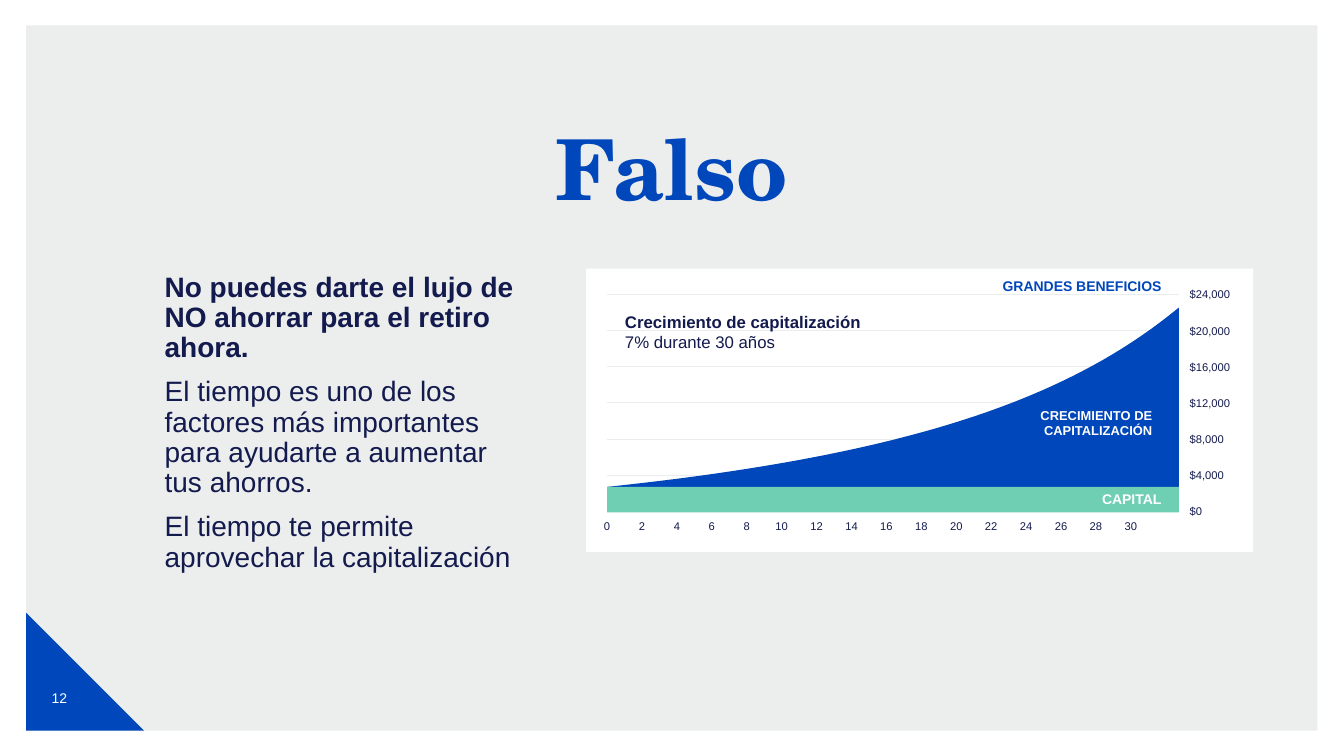
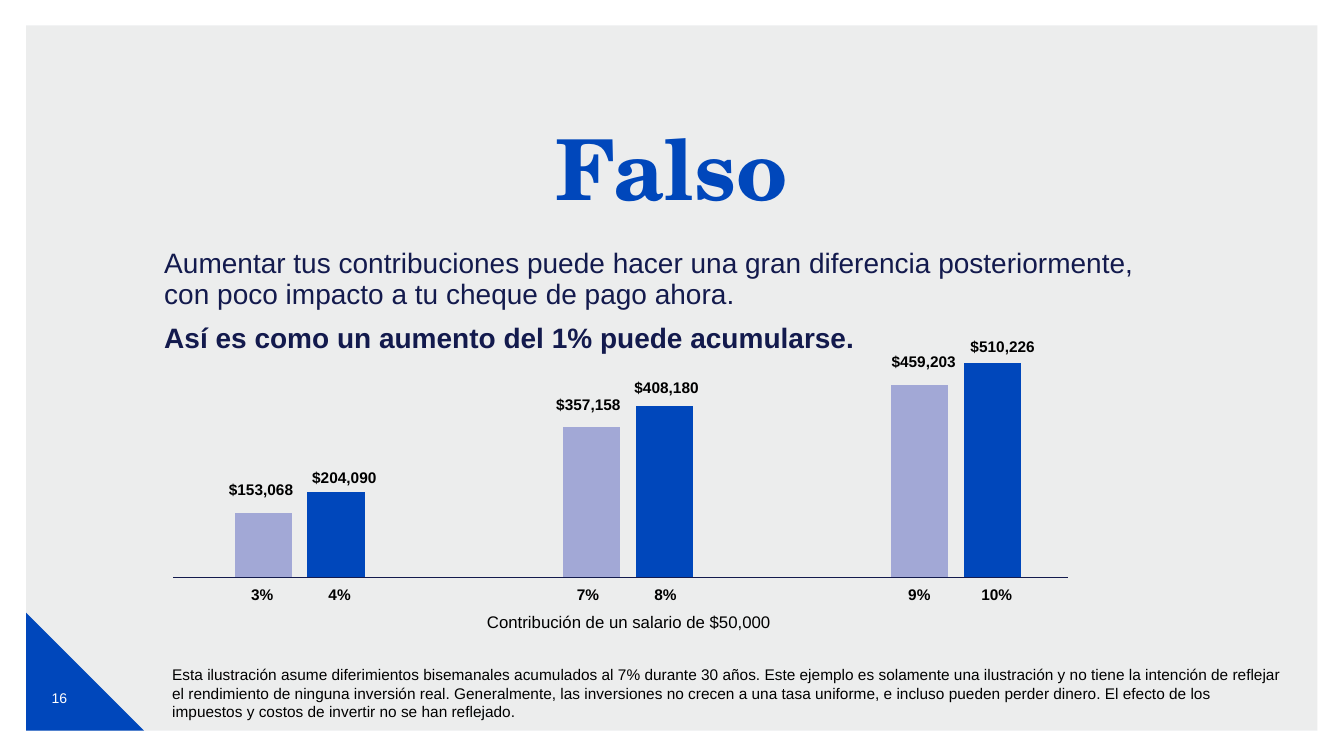
"""Two slides on retirement savings: compound growth and contribution increases."""
import pptx
import pptx.chart.data
import pptx.dml.color
import pptx.enum.chart
import pptx.enum.shapes
import pptx.enum.text
import pptx.oxml
import pptx.oxml.ns
import pptx.util

Cm, Pt = pptx.util.Cm, pptx.util.Pt
SHAPE = pptx.enum.shapes.MSO_SHAPE
ALIGN = pptx.enum.text.PP_ALIGN
ANCHOR = pptx.enum.text.MSO_ANCHOR
qn = pptx.oxml.ns.qn

COLORS = {"blue": "0047BB", "navy": "131A4D", "mint": "6ECFB2", "lilac": "A2A8D6",
          "deep": "003B9B", "band": "D0D3D4", "grid": "EBECEE", "white": "FFFFFF",
          "black": "000000"}
FONT, TITLE_FONT = "Arial", "TeX Gyre Schola"
NO_INSET, CHART_INSET, INSET = (0, 0), (0, 0.25), (0.25, 0.25)

TITLE = "Falso"
GROWTH_BODY = [
    ("No puedes darte el lujo de NO ahorrar para el retiro ahora.", True),
    ("El tiempo es uno de los factores más importantes para ayudarte a aumentar tus ahorros.", False),
    ("El tiempo te permite aprovechar la capitalización", False),
]
GROWTH_HEADING = [("Crecimiento de capitalización", True), ("7% durante 30 años", False)]
AMOUNTS = ["$24,000", "$20,000", "$16,000", "$12,000", "$8,000", "$4,000", "$0"]
YEARS = range(0, 31, 2)
AREA_LABELS = [
    ("CRECIMIENTO DE CAPITALIZACIÓN", (26.19, 9.93, 3.1, 1.45), 9.2, "white"),
    ("CAPITAL", (26.65, 11.86, 2.87, 1.45), 10, "white"),
    ("GRANDES BENEFICIOS", (25.05, 6.48, 4.47, 1.45), 10, "blue"),
]
PLOT_LEFT, PLOT_RIGHT, GRID_TOP, GRID_STEP, YEAR_STEP = 15.3, 29.71, 7.42, 0.91, 0.88
CURVE = [(PLOT_LEFT, 12.27), (23.01, 11.46), (26.97, 10.01), (PLOT_RIGHT, 7.75)]

RAISE_BODY = [
    ("Aumentar tus contribuciones puede hacer una gran diferencia posteriormente, "
     "con poco impacto a tu cheque de pago ahora.", False),
    ("Así es como un aumento del 1% puede acumularse.", True),
]
BAR_SERIES = [
    ("Series 1", [30, 70, 90, None], "lilac"),
    ("Series 2", [40, 80, 100, None], "blue"),
    ("Series 3", [None] * 4, "deep"),
]
BAR_LABELS = [
    ("3%", 6.61, "$153,068", 6.58, 11.96),
    ("4%", 8.56, "$204,090", 8.68, 11.66),
    ("7%", 14.82, "$357,158", 14.83, 9.83),
    ("8%", 16.77, "$408,180", 16.8, 9.4),
    ("9%", 23.17, "$459,203", 23.28, 8.74),
    ("10%", 25.12, "$510,226", 25.27, 8.36),
]
BAR_CAPTION = "Contribución de un salario de $50,000"
DISCLAIMER = ("Esta ilustración asume diferimientos bisemanales acumulados al 7% durante 30 años. "
              "Este ejemplo es solamente una ilustración y no tiene la intención de reflejar el "
              "rendimiento de ninguna inversión real. Generalmente, las inversiones no crecen a una "
              "tasa uniforme, e incluso pueden perder dinero. El efecto de los impuestos y costos de "
              "invertir no se han reflejado.")


def rgb(name):
    return pptx.dml.color.RGBColor.from_string(COLORS[name])


def box_cm(box):
    return [Cm(v) for v in box]


def paint(sp, color):
    sp.shadow.inherit = False
    sp.fill.solid()
    sp.fill.fore_color.rgb = rgb(color)
    sp.line.fill.background()
    return sp


def add_block(slide, kind, box, color):
    return paint(slide.shapes.add_shape(kind, *box_cm(box)), color)


def fill_text(sp, lines, size, color, font=FONT, align=ALIGN.LEFT, anchor=ANCHOR.TOP,
              inset=INSET, spacing=None, gap=0):
    tf = sp.text_frame
    tf.word_wrap = True
    tf.auto_size = pptx.enum.text.MSO_AUTO_SIZE.NONE
    tf.vertical_anchor = anchor
    tf.margin_left, tf.margin_right = [Cm(v) for v in inset]
    tf.margin_top = tf.margin_bottom = Cm(0.13)
    tf.text = "\n".join(text for text, _ in lines)
    for i, (p, (_, bold)) in enumerate(zip(tf.paragraphs, lines)):
        p.alignment = align
        p.line_spacing = spacing
        if i and gap:
            p.space_before = Pt(gap)
        for r in p.runs:
            r.font.name, r.font.size, r.font.bold = font, Pt(size), bold
            r.font.color.rgb = rgb(color)


def add_text(slide, box, lines, size, color, **style):
    if isinstance(lines, str):
        lines = [(lines, False)]
    fill_text(slide.shapes.add_textbox(*box_cm(box)), lines, size, color, **style)


def add_body(slide, box, lines):
    add_text(slide, box, lines, 20, "navy", inset=NO_INSET, spacing=0.9, gap=10)


def add_rule(slide, left, right, y, color):
    line = slide.shapes.add_connector(pptx.enum.shapes.MSO_CONNECTOR.STRAIGHT,
                                      Cm(left), Cm(y), Cm(right), Cm(y))
    line.line.color.rgb = rgb(color)
    line.line.width = Pt(0.5)
    line._element.spPr.append(pptx.oxml.parse_xml(
        f'<a:effectLst {pptx.oxml.ns.nsdecls("a")}/>'))


def decorate_layout(slide):
    band = add_block(slide, SHAPE.RECTANGLE, (0.66, 0.64, 32.54, 17.77), "band")
    band_color = band._element.spPr.find(qn("a:solidFill"))[0]
    band_color.append(pptx.oxml.parse_xml(
        f'<a:alpha {pptx.oxml.ns.nsdecls("a")} val="40000"/>'))
    corner = add_block(slide, SHAPE.RIGHT_TRIANGLE, (0.66, 15.44, 2.97, 2.97), "blue")
    tree = slide.slide_layout.shapes.element
    for i, sp in enumerate((band, corner)):
        tree.insert(2 + i, sp._element)


def new_slide(prs, number):
    slide = prs.slides.add_slide(prs.slide_layouts[5])
    title = slide.shapes.title
    title.left, title.top, title.width, title.height = box_cm((4.14, 3.1, 25.55, 1.7))
    fill_text(title, [(TITLE, True)], 60, "blue", font=TITLE_FONT, align=ALIGN.CENTER,
              inset=NO_INSET, spacing=0.9)
    add_text(slide, (0.8, 16.84, 1.4, 1.47), str(number), 10, "white",
             align=ALIGN.CENTER, anchor=ANCHOR.MIDDLE)
    return slide


def curve_point(t):
    weights = ((1 - t) ** 3, 3 * t * (1 - t) ** 2, 3 * t ** 2 * (1 - t), t ** 3)
    return tuple(Cm(sum(w * pt[axis] for w, pt in zip(weights, CURVE))) for axis in (0, 1))


def add_growth_graph(slide):
    add_block(slide, SHAPE.RECTANGLE, (14.77, 6.77, 16.81, 7.14), "white")
    for i, amount in enumerate(AMOUNTS):
        y = GRID_TOP + i * GRID_STEP
        add_text(slide, (29.98, y - 0.37, 1.6, 0.74), amount, 8, "navy",
                 anchor=ANCHOR.MIDDLE, inset=CHART_INSET)
        if amount != AMOUNTS[-1]:
            add_rule(slide, PLOT_LEFT, PLOT_RIGHT, y, "grid")
    for i, year in enumerate(YEARS):
        add_text(slide, (PLOT_LEFT + (i - 0.5) * YEAR_STEP, 13, YEAR_STEP, 0.53), str(year), 8,
                 "navy", align=ALIGN.CENTER, anchor=ANCHOR.MIDDLE, inset=NO_INSET)
    base = CURVE[0][1]
    points = [curve_point(i / 60) for i in range(61)]
    builder = slide.shapes.build_freeform(*points[0])
    builder.add_line_segments(points[1:] + [(Cm(PLOT_RIGHT), Cm(base))], close=True)
    paint(builder.convert_to_shape(), "blue")
    add_block(slide, SHAPE.RECTANGLE, (PLOT_LEFT, base, PLOT_RIGHT - PLOT_LEFT, 0.64), "mint")
    for text, box, size, color in AREA_LABELS:
        add_text(slide, box, [(text, True)], size, color, align=ALIGN.RIGHT,
                 anchor=ANCHOR.MIDDLE, inset=CHART_INSET)
    add_text(slide, (15.75, 7.29, 6.6, 2.16), GROWTH_HEADING, 12, "navy",
             anchor=ANCHOR.MIDDLE, inset=CHART_INSET)


def clear_chart_background(chart):
    ns = pptx.oxml.ns.nsdecls("c", "a")
    blank = f"<c:spPr {ns}><a:noFill/><a:ln><a:noFill/></a:ln></c:spPr>"
    frame = chart._chartSpace.find(qn("c:chart"))
    frame.addnext(pptx.oxml.parse_xml(blank))
    plot_area = frame.find(qn("c:plotArea"))
    plot_area.append(pptx.oxml.parse_xml(blank))
    for layout in plot_area.findall(qn("c:layout")):
        plot_area.remove(layout)
    places = "".join(f'<c:{tag} val="{val}"/>' for tag, val in (
        ("layoutTarget", "inner"), ("xMode", "edge"), ("yMode", "edge"),
        ("x", 0), ("y", 0.11), ("w", 1), ("h", 0.78)))
    plot_area.insert(0, pptx.oxml.parse_xml(
        f"<c:layout {ns}><c:manualLayout>{places}</c:manualLayout></c:layout>"))


def add_bar_chart(slide):
    data = pptx.chart.data.CategoryChartData()
    data.categories = ["1", "2", "3"]
    for name, values, _ in BAR_SERIES:
        data.add_series(name, values)
    chart = slide.shapes.add_chart(pptx.enum.chart.XL_CHART_TYPE.COLUMN_CLUSTERED,
                                   *box_cm((4.33, 8.39, 33.1, 6.93)), data).chart
    chart.has_legend = chart.has_title = False
    chart.font.name, chart.font.size = FONT, Pt(10)
    chart.font.color.rgb = rgb("navy")
    axis = chart.value_axis
    axis.minimum_scale, axis.maximum_scale = 0, 100
    axis.has_major_gridlines = False
    axis.visible = chart.category_axis.visible = False
    plot = chart.plots[0]
    plot.gap_width, plot.overlap, plot.vary_by_categories = 219, -27, False
    for series, (_, _, color) in zip(plot.series, BAR_SERIES):
        series.format.fill.solid()
        series.format.fill.fore_color.rgb = rgb(color)
    clear_chart_background(chart)


def add_bar_labels(slide):
    add_rule(slide, 4.37, 26.92, 14.55, "navy")
    for share, share_x, amount, amount_x, amount_top in BAR_LABELS:
        for text, x, top in ((share, share_x, 14.61), (amount, amount_x, amount_top)):
            add_text(slide, (x - 1.5, top, 3, 0.7), [(text, True)], 11, "black",
                     align=ALIGN.CENTER)


def main():
    prs = pptx.Presentation()
    prs.slide_width, prs.slide_height = Cm(33.87), Cm(19.05)

    s = new_slide(prs, 12)
    decorate_layout(s)
    add_growth_graph(s)
    add_body(s, (4.15, 6.75, 9.22, 7.14), GROWTH_BODY)

    s = new_slide(prs, 16)
    add_body(s, (4.14, 6.16, 24.69, 3.05), RAISE_BODY)
    add_text(s, (4.09, 16.64, 28.58, 1.6), DISCLAIMER, 11, "black")
    add_bar_chart(s)
    add_text(s, (4.84, 15.29, 22.02, 0.76), BAR_CAPTION, 12, "black", align=ALIGN.CENTER)
    add_bar_labels(s)

    prs.save("out.pptx")


if __name__ == "__main__":
    main()
